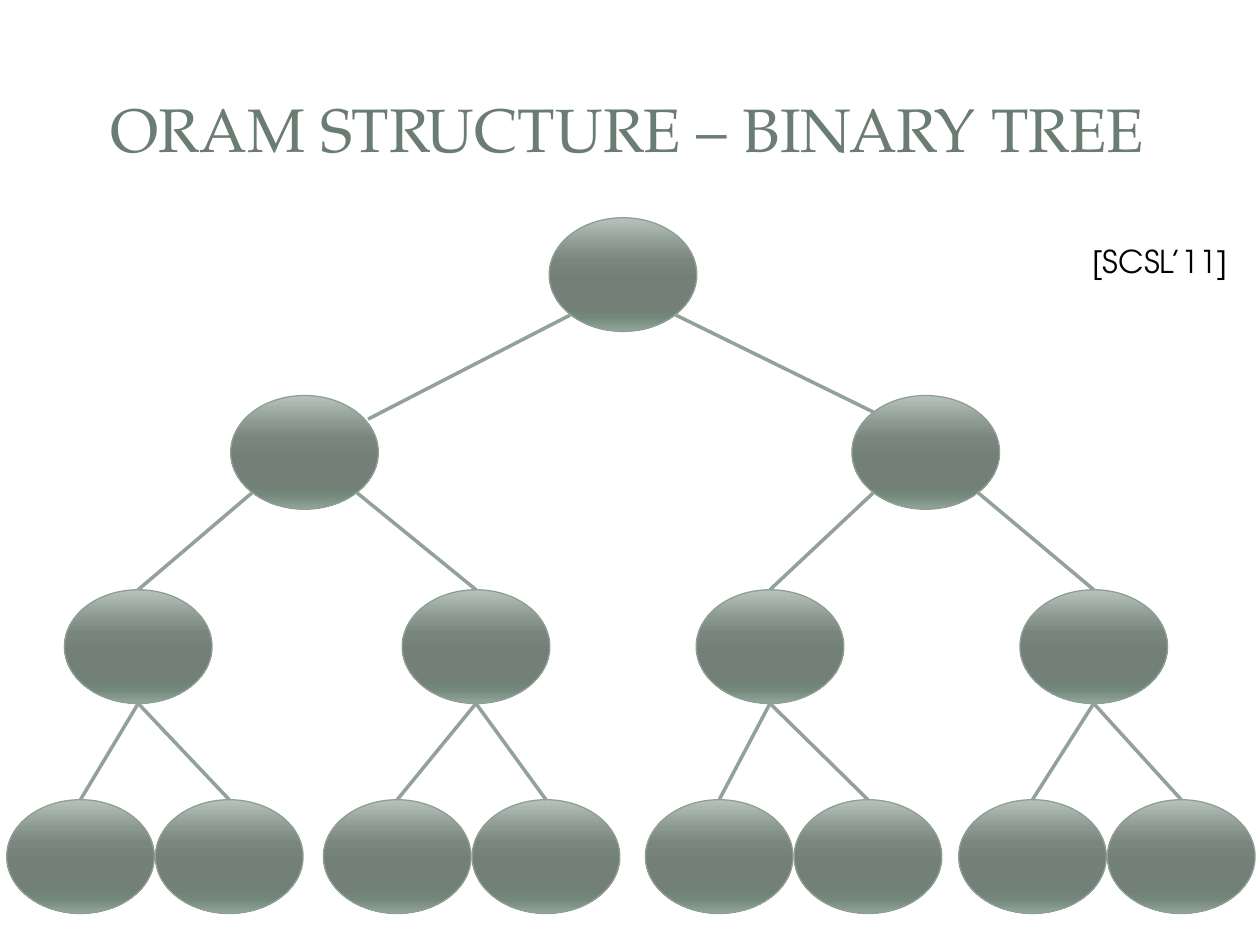
"""Build a slide that shows the ORAM structure as a binary tree."""
from math import sqrt

from lxml import etree
from pptx import Presentation
from pptx import util as u
from pptx.dml.color import RGBColor
from pptx.enum import shapes, text
from pptx.oxml.ns import qn

TITLE = "ORAM STRUCTURE – BINARY TREE"
CITATION = "[SCSL’11]"
LEVEL_TOPS = [124.4, 226, 337, 457]
LEVEL_CENTERS = [
    [356],
    [174, 529],
    [79, 272, 440, 625],
    [46, 131, 227, 312, 411, 496, 590, 675],
]
NODE_WIDTH, NODE_HEIGHT = 84.4, 65
END_NUDGES = {(1, 0): (6.5, 4)}
GRADIENT = [(0, "B6C3BB"), (25, "8B9890"), (38, "79867E"), (55, "728078"),
            (80, "708176"), (88, "75887C"), (100, "91A79A")]


def color(value):
    return RGBColor.from_string(value)


def write(box, words, font, size, ink):
    box.text_frame.text = words
    para = box.text_frame.paragraphs[0]
    para.font.name = font
    para.font.size = u.Pt(size)
    para.font.color.rgb = color(ink)
    return para


def add_node(slide, center, top):
    node = slide.shapes.add_shape(
        shapes.MSO_SHAPE.OVAL, u.Pt(center - NODE_WIDTH / 2), u.Pt(top),
        u.Pt(NODE_WIDTH), u.Pt(NODE_HEIGHT))
    node.shadow.inherit = False
    node.fill.gradient()
    node.fill.gradient_angle = 270
    stops = node.element.spPr.find(f".//{qn('a:gsLst')}")
    for stop in list(stops):
        stops.remove(stop)
    for percent, shade in GRADIENT:
        stop = etree.SubElement(stops, qn("a:gs"), pos=str(percent * 1000))
        etree.SubElement(stop, qn("a:srgbClr"), val=shade)
    node.line.color.rgb = color("8F9F96")
    node.line.width = u.Pt(0.75)


def rim_point(center, top, across, down):
    """Return the rim point that lies in the given direction from the center."""
    length = sqrt(across ** 2 + down ** 2)
    return (center + across / length * NODE_WIDTH / 2,
            top + (1 + down / length) * NODE_HEIGHT / 2)


def add_branch(slide, level, index):
    side = 1 if index % 2 else -1
    start = rim_point(LEVEL_CENTERS[level - 1][index // 2], LEVEL_TOPS[level - 1],
                      side if level < 3 else 0, 1)
    end = rim_point(LEVEL_CENTERS[level][index], LEVEL_TOPS[level],
                    -side if level == 1 else 0, -1)
    nudge = END_NUDGES.get((level, index), (0, 0))
    branch = slide.shapes.add_connector(
        shapes.MSO_CONNECTOR.STRAIGHT, u.Pt(start[0]), u.Pt(start[1]),
        u.Pt(end[0] + nudge[0]), u.Pt(end[1] + nudge[1]))
    branch.line.color.rgb = color("93A299")
    branch.line.width = u.Pt(2)
    etree.SubElement(branch.element.spPr, qn("a:effectLst"))


def main():
    deck = Presentation()
    deck.slide_width, deck.slide_height = u.Pt(720), u.Pt(540)
    slide = deck.slides.add_slide(deck.slide_layouts[5])

    title = slide.shapes.title
    title.left, title.top = u.Pt(33.8), u.Pt(32.4)
    title.width, title.height = u.Pt(650), u.Pt(82)
    title.text_frame.vertical_anchor = text.MSO_ANCHOR.MIDDLE
    para = write(title, TITLE, "TeX Gyre Pagella", 35, "6B7D72")
    para.alignment = text.PP_ALIGN.CENTER

    for centers, top in zip(LEVEL_CENTERS, LEVEL_TOPS):
        for center in centers:
            add_node(slide, center, top)
    for level in range(1, len(LEVEL_CENTERS)):
        for index in range(len(LEVEL_CENTERS[level])):
            add_branch(slide, level, index)

    citation = slide.shapes.add_textbox(u.Pt(617), u.Pt(134.6), u.Pt(100.8), u.Pt(29))
    citation.text_frame.word_wrap = True
    write(citation, CITATION, "TeX Gyre Adventor", 18, "000000")
    deck.save("out.pptx")


if __name__ == "__main__":
    main()
